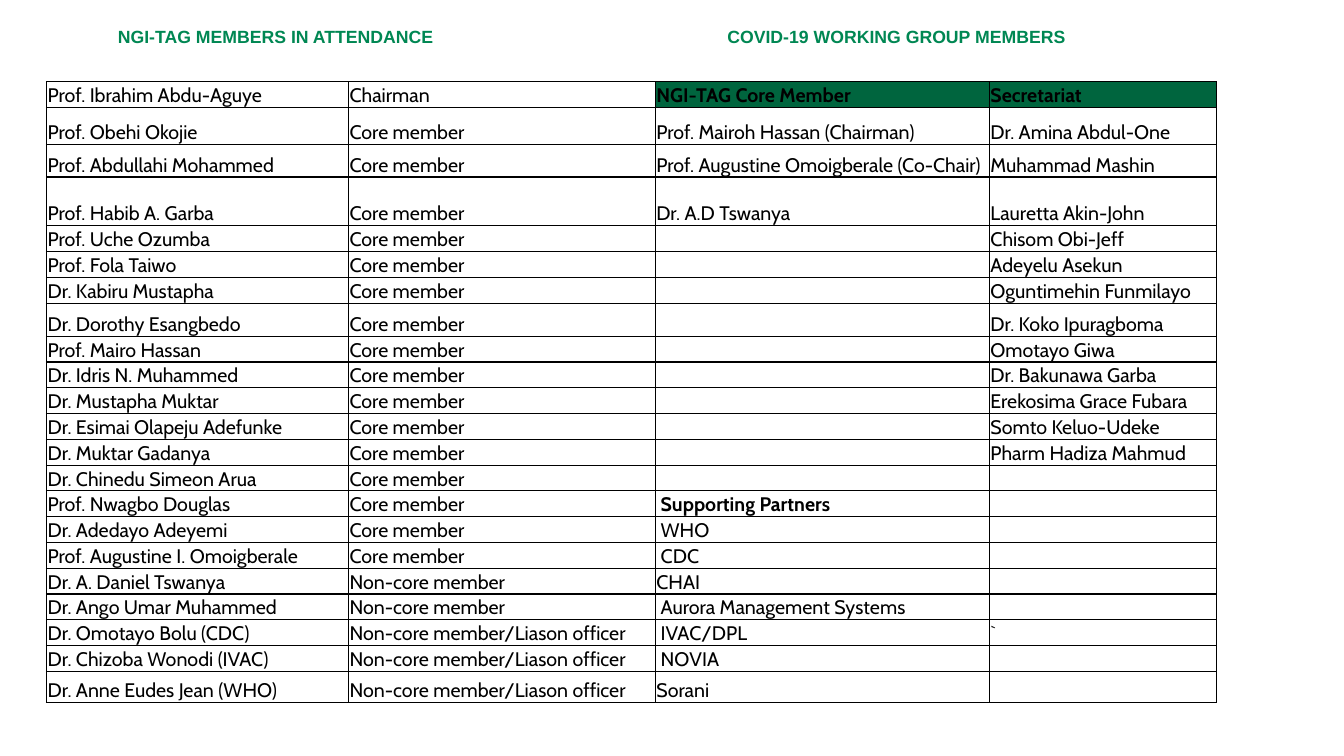
from lxml import etree
from pptx import Presentation
from pptx.dml.color import RGBColor
from pptx.enum.text import MSO_ANCHOR, MSO_AUTO_SIZE, PP_ALIGN
from pptx.oxml.ns import qn
from pptx.util import Cm, Pt

LEFT = PP_ALIGN.LEFT
MIDDLE, BOTTOM = MSO_ANCHOR.MIDDLE, MSO_ANCHOR.BOTTOM
NO_FIT = MSO_AUTO_SIZE.NONE

HEADINGS = ["NGI-TAG MEMBERS IN ATTENDANCE", "COVID-19 WORKING GROUP MEMBERS"]
HEADING_STOPS = [2.54, 17.9]
COLUMN_WIDTHS = [7.61, 7.73, 8.42, 5.72]
ROW_HEIGHT = 0.65
TALL_ROWS = {1: 0.94, 2: 0.81, 3: 1.23, 7: 0.83, 21: 0.79}
MEMBERS = [
    "Prof. Ibrahim Abdu-Aguye", "Prof. Obehi Okojie", "Prof. Abdullahi Mohammed",
    "Prof. Habib A. Garba", "Prof. Uche Ozumba", "Prof. Fola Taiwo",
    "Dr. Kabiru Mustapha", "Dr. Dorothy Esangbedo", "Prof. Mairo Hassan",
    "Dr. Idris N. Muhammed", "Dr. Mustapha Muktar", "Dr. Esimai Olapeju Adefunke",
    "Dr. Muktar Gadanya", "Dr. Chinedu Simeon Arua", "Prof. Nwagbo Douglas",
    "Dr. Adedayo Adeyemi", "Prof. Augustine I. Omoigberale", "Dr. A. Daniel Tswanya",
    "Dr. Ango Umar Muhammed", "Dr. Omotayo Bolu (CDC)", "Dr. Chizoba Wonodi (IVAC)",
    "Dr. Anne Eudes Jean (WHO)",
]
ROLES = (["Chairman"] + ["Core member"] * 16 + ["Non-core member"] * 2
         + ["Non-core member/Liason officer"] * 3)
CORE_GROUP = [
    "NGI-TAG Core Member", "Prof. Mairoh Hassan (Chairman)",
    "Prof. Augustine Omoigberale (Co-Chair)", "Dr. A.D Tswanya",
]
PARTNERS = [
    "Supporting Partners", "WHO", "CDC", "CHAI", "Aurora Management Systems",
    "IVAC/DPL", "NOVIA", "Sorani",
]
SECRETARIAT = [
    "Secretariat", "Dr. Amina Abdul-One", "Muhammad Mashin", "Lauretta Akin-John",
    "Chisom Obi-Jeff", "Adeyelu Asekun", "Oguntimehin Funmilayo",
    "Dr. Koko Ipuragboma", "Omotayo Giwa", "Dr. Bakunawa Garba",
    "Erekosima Grace Fubara", "Somto Keluo-Udeke", "Pharm Hadiza Mahmud",
]
BLANK_ROWS = len(MEMBERS) - len(CORE_GROUP) - len(PARTNERS)
COLUMNS = [
    MEMBERS, ROLES, CORE_GROUP + [""] * BLANK_ROWS + PARTNERS,
    SECRETARIAT + [""] * 6 + ["`"] + [""] * 2,
]
BOLD = {"NGI-TAG Core Member", "Secretariat", "Supporting Partners"}
INDENTED = set(PARTNERS) - {"CHAI", "Sorani"}


def rgb(value):
    """Return the colour for a hex string."""
    return RGBColor.from_string(value)


def write(tf, text, size=14, font="Cabin", color="000000", bold=False):
    """Write one formatted line into a text frame."""
    p = tf.paragraphs[0]
    p.alignment = LEFT
    if not text:
        etree.SubElement(p._p, qn("a:endParaRPr"), sz=str(size * 100))
        return
    r = p.add_run()
    r.text = text
    r.font.size = Pt(size)
    r.font.name = font
    r.font.bold = bold
    r.font.color.rgb = rgb(color)


def add_tab_stops(p, stops):
    """Give a paragraph left tab stops, in centimetres."""
    tabs = etree.SubElement(p._p.get_or_add_pPr(), qn("a:tabLst"))
    for stop in stops:
        etree.SubElement(tabs, qn("a:tab"), pos=str(Cm(stop)), algn="l")


def add_borders(cell, color="000000", width=1):
    """Draw a solid line on each side of a cell."""
    tcPr = cell._tc.get_or_add_tcPr()
    for side in ("lnL", "lnR", "lnT", "lnB"):
        ln = etree.SubElement(tcPr, qn(f"a:{side}"), w=str(Pt(width)))
        fill = etree.SubElement(ln, qn("a:solidFill"))
        etree.SubElement(fill, qn("a:srgbClr"), val=color)


def add_headings(s, left, top, width, height):
    """Place both headings in the title, each at its tab stop."""
    sp = s.shapes.title
    sp.left, sp.top, sp.width, sp.height = Cm(left), Cm(top), Cm(width), Cm(height)
    tf = sp.text_frame
    tf.word_wrap = True
    tf.auto_size = NO_FIT
    tf.vertical_anchor = MIDDLE
    tf.margin_left = tf.margin_right = tf.margin_top = tf.margin_bottom = Cm(0.25)
    add_tab_stops(tf.paragraphs[0], HEADING_STOPS)
    write(tf, "".join("\t" + heading for heading in HEADINGS),
          size=12.6, font="Arial", color="008753", bold=True)


def fill_cell(cell, text, header):
    """Write and format one cell of the members table."""
    cell.margin_left = Cm(0.14 if text in INDENTED else 0.03)
    cell.margin_right = cell.margin_top = Cm(0.03)
    cell.margin_bottom = Cm(0)
    cell.vertical_anchor = BOTTOM
    add_borders(cell)
    if header:
        cell.fill.solid()
        cell.fill.fore_color.rgb = rgb("00653E")
    else:
        cell.fill.background()
    write(cell.text_frame, text, bold=text in BOLD)


def add_members_table(s, left, top):
    """Place the table of members, working group and secretariat."""
    heights = [TALL_ROWS.get(i, ROW_HEIGHT) for i in range(len(MEMBERS))]
    table = s.shapes.add_table(len(heights), len(COLUMNS), Cm(left), Cm(top),
                               Cm(sum(COLUMN_WIDTHS)), Cm(sum(heights))).table
    table.first_row = table.horz_banding = False
    for row, height in zip(table.rows, heights):
        row.height = Cm(height)
    for j, (width, texts) in enumerate(zip(COLUMN_WIDTHS, COLUMNS)):
        table.columns[j].width = Cm(width)
        for i, text in enumerate(texts):
            fill_cell(table.cell(i, j), text, header=i == 0 and j >= 2)


def main():
    """Build and save the slide."""
    prs = Presentation()
    prs.slide_width, prs.slide_height = Cm(33.87), Cm(19.05)
    s = prs.slides.add_slide(prs.slide_layouts[5])
    add_headings(s, 0.18, 0.38, 33.68, 1.09)
    add_members_table(s, 1.17, 2.06)
    prs.save("out.pptx")


if __name__ == "__main__":
    main()
